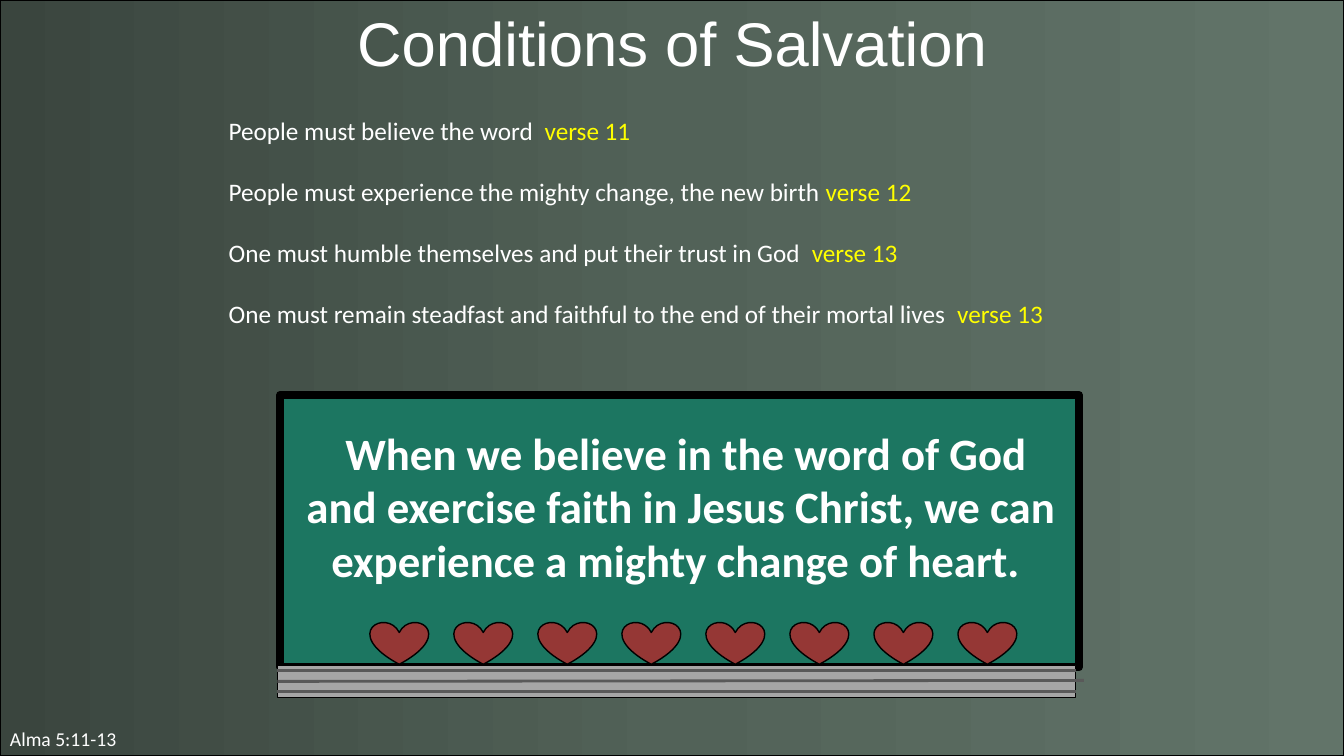
import copy
from dataclasses import dataclass

import lxml.etree
import pptx
import pptx.dml.color
import pptx.enum.shapes
import pptx.enum.text
import pptx.oxml.ns
import pptx.util

Inches = pptx.util.Inches
Align = pptx.enum.text.PP_ALIGN
Preset = pptx.enum.shapes.MSO_SHAPE


@dataclass(frozen=True)
class Theme:
    """Colours, fonts and type sizes of the slide."""
    backdrop: tuple = ((0, "3A453E"), (0.5, "526258"), (1, "627469"))
    text: str = "FFFFFF"
    verse: str = "FFFF00"
    outline: str = "000000"
    board: str = "1C7661"
    tray: str = "A6A6A6"
    groove: str = "595959"
    heart: str = "953735"
    title_font: str = "Arial"
    body_font: str = "Calibri"
    title_size: int = 44
    message_size: int = 32
    body_size: int = 18
    source_size: int = 14


THEME = Theme()
CONDITIONS = (
    ("People must believe the word  ", "verse 11"),
    ("People must experience the mighty change, the new birth ", "verse 12"),
    ("One must humble themselves and put their trust in God  ", "verse 13"),
    ("One must remain steadfast and faithful to the end of their mortal lives  ", "verse 13"),
)
MESSAGE = (
    " ",
    "When we believe in the word of God and exercise faith in Jesus Christ, "
    "we can experience a mighty change of heart. ",
)


def rgb(colour):
    """Turn a hex string into a colour."""
    return pptx.dml.color.RGBColor.from_string(colour)


def format_run(run, size, colour=THEME.text, font=THEME.body_font, bold=False):
    """Set the typeface, size, colour and weight of a run."""
    run.font.name = font
    run.font.size = pptx.util.Pt(size)
    run.font.color.rgb = rgb(colour)
    run.font.bold = bold


def prepare_frame(shape):
    """Return the wrapped, top-anchored text frame of a shape."""
    frame = shape.text_frame
    frame.word_wrap = True
    frame.auto_size = pptx.enum.text.MSO_AUTO_SIZE.NONE
    frame.vertical_anchor = pptx.enum.text.MSO_ANCHOR.TOP
    return frame


def add_frame(shapes, left, top, width, height):
    """Add a text box and return its text frame."""
    box = shapes.add_textbox(Inches(left), Inches(top), Inches(width), Inches(height))
    return prepare_frame(box)


def add_outlined(shapes, preset, left, top, width, height, colour=None, weight=1):
    """Add a preset shape with a black outline and an optional solid fill."""
    shape = shapes.add_shape(preset, Inches(left), Inches(top), Inches(width), Inches(height))
    shape.shadow.inherit = False
    shape.line.color.rgb = rgb(THEME.outline)
    shape.line.width = pptx.util.Pt(weight)
    if colour:
        shape.fill.solid()
        shape.fill.fore_color.rgb = rgb(colour)
    return shape


def add_backdrop(slide, left, top, width, height):
    """Place the gradient rectangle behind everything else."""
    backdrop = add_outlined(slide.shapes, Preset.RECTANGLE, left, top, width, height)
    fill = backdrop.fill
    fill.gradient()
    fill.gradient_angle = 0
    first = fill.gradient_stops[0]._gs
    first.addnext(copy.deepcopy(first))
    for stop, (position, colour) in zip(fill.gradient_stops, THEME.backdrop):
        stop.position = position
        stop.color.rgb = rgb(colour)
    slide.shapes._spTree.insert(2, backdrop._element)


def add_title(slide, left, top, width, height):
    """Fill and place the title placeholder."""
    title = slide.shapes.title
    title.left, title.top = Inches(left), Inches(top)
    title.width, title.height = Inches(width), Inches(height)
    paragraph = prepare_frame(title).paragraphs[0]
    paragraph.text = "Conditions of Salvation"
    paragraph.alignment = Align.CENTER
    format_run(paragraph.runs[0], THEME.title_size, font=THEME.title_font)


def add_conditions(slide, left, top, width, height):
    """List the conditions, each followed by its verse."""
    frame = add_frame(slide.shapes, left, top, width, height)
    for index, (condition, verse) in enumerate(CONDITIONS):
        paragraph = frame.add_paragraph() if index else frame.paragraphs[0]
        paragraph.space_before = pptx.util.Pt(22 if index else 0)
        for text, colour in ((condition, THEME.text), (verse, THEME.verse)):
            run = paragraph.add_run()
            run.text = text
            format_run(run, THEME.body_size, colour)


def add_source(slide, left, top, width, height):
    """Write the scripture reference."""
    paragraph = add_frame(slide.shapes, left, top, width, height).paragraphs[0]
    paragraph.text = "Alma 5:11-13"
    format_run(paragraph.runs[0], THEME.source_size)


def add_groove(shapes, left, top, right, bottom):
    """Draw one line along the chalk tray."""
    groove = shapes.add_connector(
        pptx.enum.shapes.MSO_CONNECTOR.STRAIGHT,
        Inches(left), Inches(top), Inches(right), Inches(bottom))
    groove.line.color.rgb = rgb(THEME.groove)
    groove.line.width = pptx.util.Pt(2)
    lxml.etree.SubElement(groove._element.spPr, pptx.oxml.ns.qn("a:effectLst"))


def add_chalkboard(slide, left, top, width, height):
    """Draw the board with its tray, message and row of hearts."""
    shapes = slide.shapes.add_group_shape().shapes
    board_width = width - 0.08
    tray_top = top + height - 0.32
    add_outlined(shapes, Preset.RECTANGLE, left + 0.03, top, board_width, 2.7, THEME.board, 6)
    add_outlined(shapes, Preset.RECTANGLE, left, tray_top, board_width, 0.32, THEME.tray)
    right = left + board_width
    for start, end, finish in ((0.05, 0.05, right), (0.16, 0.15, left + width), (0.26, 0.26, right)):
        add_groove(shapes, left, tray_top + start, finish, tray_top + end)
    paragraph = add_frame(shapes, left + 0.17, top + 0.25, 7.67, 1.72).paragraphs[0]
    paragraph.alignment = Align.CENTER
    for text, bold in zip(MESSAGE, (False, True)):
        run = paragraph.add_run()
        run.text = text
        format_run(run, THEME.message_size, bold=bold)
    for index in range(8):
        heart_left = left + 0.92 + index * 5 / 6
        add_outlined(shapes, Preset.HEART, heart_left, top + 2.25, 0.58, 0.42, THEME.heart)


def main():
    """Build and save the slide."""
    presentation = pptx.Presentation()
    presentation.slide_width = Inches(13.33)
    presentation.slide_height = Inches(7.5)
    slide = presentation.slides.add_slide(presentation.slide_layouts[5])
    add_backdrop(slide, 0, 0, 13.33, 7.5)
    add_source(slide, 0, 7.16, 2.08, 0.34)
    add_title(slide, 1.67, 0, 10, 0.84)
    add_conditions(slide, 2.17, 1.09, 8.5, 2.52)
    add_chalkboard(slide, 2.75, 3.92, 8, 3)
    presentation.save("out.pptx")


if __name__ == "__main__":
    main()
